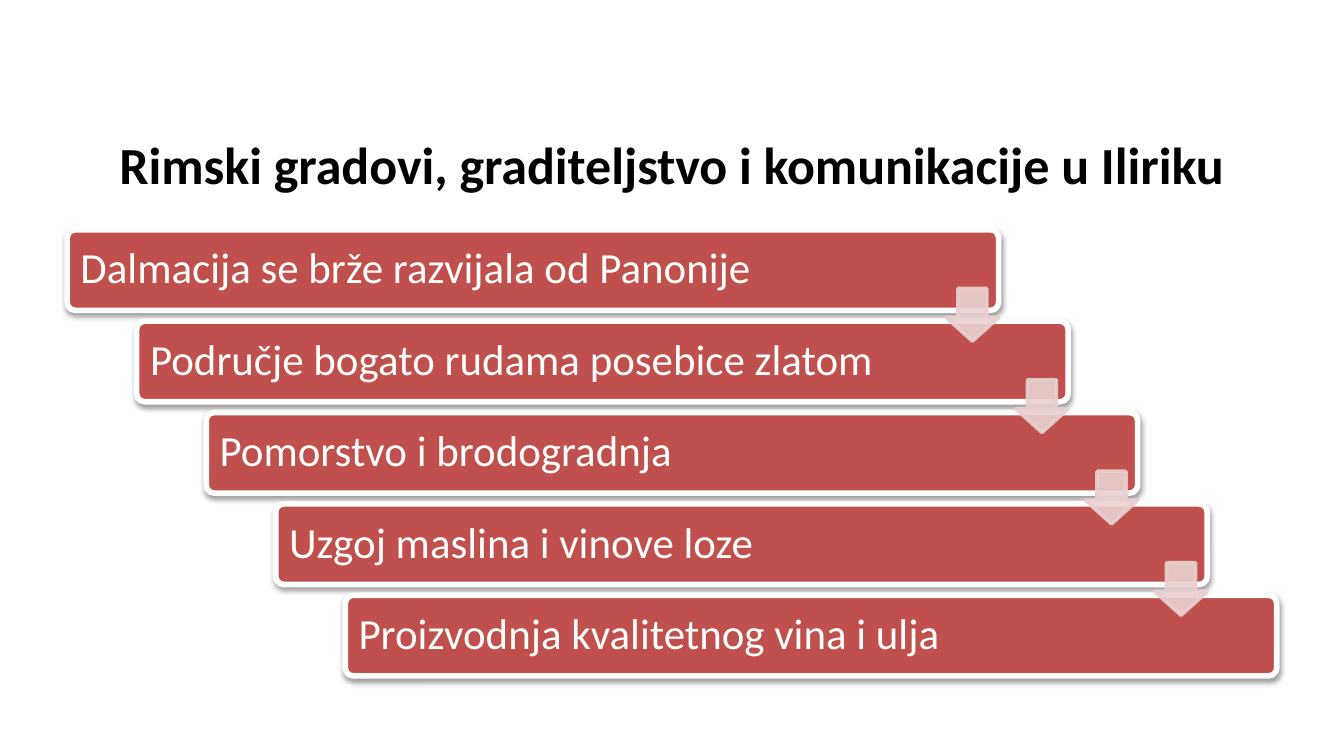
from dataclasses import dataclass

from lxml import etree
from pptx import Presentation
from pptx.dml.color import RGBColor
from pptx.enum.shapes import MSO_SHAPE
from pptx.enum.text import MSO_ANCHOR, PP_ALIGN
from pptx.oxml.ns import qn
from pptx.shapes.autoshape import Shape
from pptx.slide import Slide
from pptx.text.text import TextFrame
from pptx.util import Pt

BAR_KIND = MSO_SHAPE.ROUNDED_RECTANGLE
ARROW_KIND = MSO_SHAPE.DOWN_ARROW
MIDDLE = MSO_ANCHOR.MIDDLE
LEFT, CENTER = PP_ALIGN.LEFT, PP_ALIGN.CENTER

FONT = "Calibri"
COLORS = {
    "title": "000000",
    "bar": "C0504D",
    "white": "FFFFFF",
    "arrow": "E8D0D0",
    "shadow": "000000",
}

# Staircase geometry, in points
FIRST_LEFT, FIRST_TOP = 36, 123.1
STEP_X, STEP_Y = 37.25, 48.96
BAR_WIDTH, BAR_HEIGHT = 499, 43.2
ARROW_SIZE, ARROW_DROP = 28.1, 31.5


@dataclass
class Step:
    text: str
    left: float
    top: float


TEXTS = [
    "Dalmacija se brže razvijala od Panonije",
    "Područje bogato rudama posebice zlatom",
    "Pomorstvo i brodogradnja",
    "Uzgoj maslina i vinove loze",
    "Proizvodnja kvalitetnog vina i ulja",
]
STEPS = [
    Step(text, FIRST_LEFT + i * STEP_X, FIRST_TOP + i * STEP_Y)
    for i, text in enumerate(TEXTS)
]


def color(name: str) -> RGBColor:
    return RGBColor.from_string(COLORS[name])


def write_line(frame: TextFrame, text: str, size: float, color_name: str,
               align: PP_ALIGN, margin: float, bold: bool = False) -> None:
    frame.word_wrap = True
    frame.vertical_anchor = MIDDLE
    frame.margin_left = frame.margin_right = Pt(margin)
    frame.margin_top = frame.margin_bottom = Pt(margin)
    para = frame.paragraphs[0]
    para.alignment = align
    para.line_spacing = 0.9
    span = para.add_run()
    span.text = text
    span.font.name = FONT
    span.font.size = Pt(size)
    span.font.bold = bold
    span.font.color.rgb = color(color_name)


def paint(shape: Shape, fill: str, line: str, line_width: float) -> None:
    shape.shadow.inherit = False
    shape.fill.solid()
    shape.fill.fore_color.rgb = color(fill)
    shape.line.color.rgb = color(line)
    shape.line.width = Pt(line_width)


def set_alpha(parent: etree._Element, percent: int) -> None:
    for node in parent.iter(qn("a:srgbClr")):
        etree.SubElement(node, qn("a:alpha"), val=str(percent * 1000))


def add_soft_shadow(shape: Shape) -> None:
    effects = shape.element.spPr.find(qn("a:effectLst"))
    shadow = etree.SubElement(
        effects, qn("a:outerShdw"), blurRad=str(Pt(3.1)), dist=str(Pt(1.6)),
        dir=str(90 * 60000), rotWithShape="0")
    etree.SubElement(shadow, qn("a:srgbClr"), val=COLORS["shadow"])
    set_alpha(shadow, 38)


def draw_bar(page: Slide, step: Step) -> None:
    bar = page.shapes.add_shape(BAR_KIND, Pt(step.left), Pt(step.top),
                                Pt(BAR_WIDTH), Pt(BAR_HEIGHT))
    bar.adjustments[0] = 0.1
    paint(bar, "bar", "white", 3)
    add_soft_shadow(bar)
    write_line(bar.text_frame, step.text, 23, "white", LEFT, 5.9)


def draw_arrow(page: Slide, step: Step) -> None:
    arrow = page.shapes.add_shape(
        ARROW_KIND, Pt(step.left + BAR_WIDTH - ARROW_SIZE),
        Pt(step.top + ARROW_DROP), Pt(ARROW_SIZE), Pt(ARROW_SIZE))
    # Head length first, then shaft width
    arrow.adjustments[0] = 0.55
    arrow.adjustments[1] = 0.45
    paint(arrow, "arrow", "arrow", 2)
    set_alpha(arrow.element.spPr, 90)


def main() -> None:
    deck = Presentation()
    deck.slide_width, deck.slide_height = Pt(720), Pt(405)
    page = deck.slides.add_slide(deck.slide_layouts[6])

    # Title
    title = page.shapes.add_textbox(Pt(36), Pt(61.5), Pt(648), Pt(56.2))
    write_line(title.text_frame,
               "Rimski gradovi, graditeljstvo i komunikacije u Iliriku",
               27.9, "title", CENTER, 3.6, bold=True)

    # Staircase of bars
    for step in STEPS:
        draw_bar(page, step)

    # Arrows from each bar to the next
    for step in STEPS[:-1]:
        draw_arrow(page, step)

    deck.save("out.pptx")


if __name__ == "__main__":
    main()
